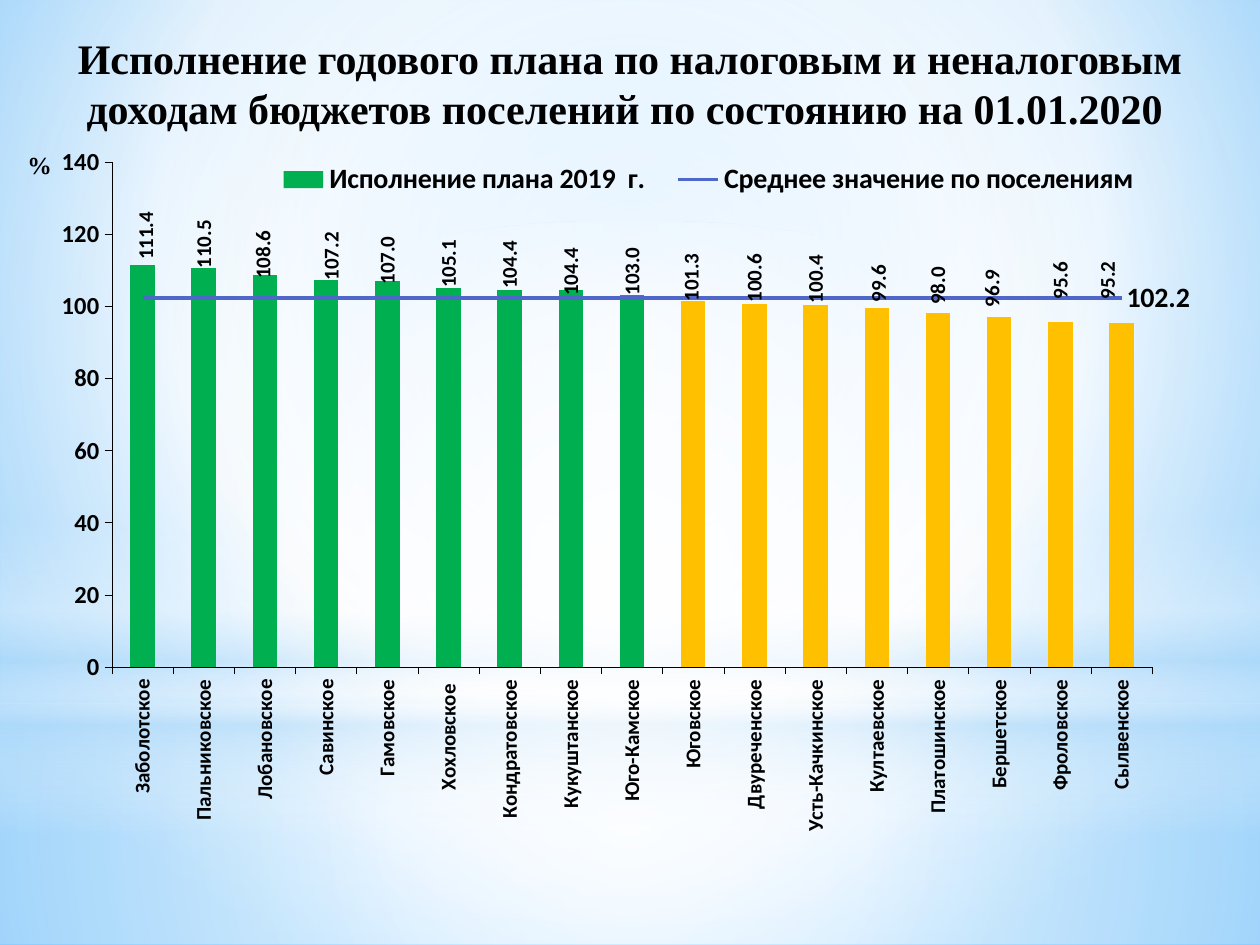
import pptx
import pptx.chart.data
import pptx.dml.color
import pptx.enum.chart
import pptx.enum.shapes
import pptx.enum.text
import pptx.oxml
import pptx.oxml.ns
import pptx.util

Pt = pptx.util.Pt
qn = pptx.oxml.ns.qn
nsdecls = pptx.oxml.ns.nsdecls

COLORS = {
    "text": "000000", "above": "00B050", "below": "FFC000", "average": "4E67C8",
    "white": "FFFFFF", "haze": "B4DCFA", "sky": "9ED5FF", "deep": "5BB9FF",
}
AVERAGE = 102.2
CHART_WIDTH, CHART_HEIGHT = 683.3, 441.4
SETTLEMENTS = {
    "Заболотское": 111.4, "Пальниковское": 110.5, "Лобановское": 108.6,
    "Савинское": 107.2, "Гамовское": 107, "Хохловское ": 105.1,
    "Кондратовское": 104.4, "Кукуштанское": 104.4, "Юго-Камское": 103,
    "Юговское": 101.3, "Двуреченское": 100.6, "Усть-Качкинское": 100.4,
    "Култаевское": 99.6, "Платошинское": 98, "Бершетское": 96.9,
    "Фроловское": 95.6, "Сылвенское": 95.2,
}
# Shift of each column label from its default place, in points
LABEL_SHIFTS = [(2, 0), (0, 3), (-1, 5), (3, 3), (0, 5), (0, 3), (0, 2), (0, 6), (0, 3),
                (-1, 3), (0, 2), (0, 2), (1, 0), (0, -2), (-4, -3), (0, -10), (-8, -11)]
CENTER = '<a:path path="circle"><a:fillToRect l="50000" t="50000" r="50000" b="50000"/></a:path>'
BACKDROP = '<a:path path="circle"><a:fillToRect l="20000" t="10000" r="20000" b="60000"/></a:path>'
DOWNWARD = '<a:lin ang="5400000" scaled="0"/>'


def rgb(name):
    return pptx.dml.color.RGBColor.from_string(COLORS[name])


def set_values(target, values):
    for name, value in values.items():
        setattr(target, name, value)


def set_font(font, size, name="Calibri"):
    set_values(font, {"size": Pt(size), "name": name, "bold": True})
    font.color.rgb = rgb("text")


def set_gradient(fill, parent, stops, direction):
    """Fill with stops of (position, color name, opacity), all in percent."""
    fill.solid()
    stop_xml = "".join(
        f'<a:gs pos="{position * 1000}"><a:srgbClr val="{COLORS[color]}">'
        f'<a:alpha val="{opacity * 1000}"/></a:srgbClr></a:gs>'
        for position, color, opacity in stops)
    gradient = pptx.oxml.parse_xml(
        f'<a:gradFill {nsdecls("a")} rotWithShape="1"><a:gsLst>{stop_xml}</a:gsLst>'
        f'{direction}</a:gradFill>')
    solid = next(parent.iter(qn("a:solidFill")))
    solid.getparent().replace(solid, gradient)


def add_glow(slide, kind, top, height, stops, direction=CENTER):
    shape = slide.shapes.add_shape(kind, 0, Pt(top), Pt(720), Pt(height))
    shape.shadow.inherit = False
    shape.line.fill.background()
    set_gradient(shape.fill, shape.element, stops, direction)


def add_background(slide):
    set_gradient(slide.background.fill, slide.element,
                 [(0, "sky", 100), (60, "white", 100), (100, "deep", 100)], BACKDROP)
    kinds = pptx.enum.shapes.MSO_SHAPE
    add_glow(slide, kinds.RECTANGLE, 402, 138,
             [(0, "white", 91), (37, "white", 76), (100, "haze", 79)])
    add_glow(slide, kinds.RECTANGLE, 0, 402,
             [(0, "white", 89), (48, "white", 62), (100, "haze", 79)])
    add_glow(slide, kinds.RECTANGLE, 296.6, 180,
             [(0, "white", 0), (29, "white", 30), (45, "haze", 40),
              (55, "white", 26), (65, "haze", 60), (100, "white", 0)], DOWNWARD)
    add_glow(slide, kinds.OVAL, 126, 402, [(0, "white", 100), (56, "white", 0)])


def add_text(slide, text, box, size, alignment):
    frame = slide.shapes.add_textbox(*map(Pt, box)).text_frame
    frame.word_wrap = True
    paragraph = frame.paragraphs[0]
    paragraph.alignment = alignment
    run = paragraph.add_run()
    run.text = text
    set_font(run.font, size, "Times New Roman")


def layout_xml(**values):
    tags = "".join(f'<c:{tag} val="{value}"/>' for tag, value in values.items())
    return f'<c:layout {nsdecls("c")}><c:manualLayout>{tags}</c:manualLayout></c:layout>'


def add_labels(series, shifts, size, rotation, position):
    """Label the points whose indexes are keys of shifts."""
    labels = ""
    for index, (x, y) in shifts.items():
        layout = layout_xml(x=round(x / CHART_WIDTH, 4), y=round(y / CHART_HEIGHT, 4))
        labels += (
            f'<c:dLbl><c:idx val="{index}"/>{layout}'
            '<c:numFmt formatCode="#,##0.0" sourceLinked="0"/><c:spPr><a:noFill/></c:spPr>'
            f'<c:txPr><a:bodyPr rot="{rotation * 60000}" vert="horz"/><a:p><a:pPr>'
            f'<a:defRPr sz="{size * 100}" b="1"><a:solidFill><a:srgbClr val="{COLORS["text"]}"/>'
            '</a:solidFill><a:latin typeface="Calibri"/></a:defRPr></a:pPr>'
            f'<a:endParaRPr/></a:p></c:txPr><c:dLblPos val="{position}"/>'
            '<c:showLegendKey val="0"/><c:showVal val="1"/><c:showCatName val="0"/>'
            '<c:showSerName val="0"/><c:showPercent val="0"/><c:showBubbleSize val="0"/></c:dLbl>')
    hidden = "".join(f'<c:{tag} val="0"/>' for tag in (
        "showLegendKey", "showVal", "showCatName", "showSerName", "showPercent", "showBubbleSize"))
    element = pptx.oxml.parse_xml(
        f'<c:dLbls {nsdecls("c", "a")}>{labels}{hidden}</c:dLbls>')
    series._element.find(qn("c:cat")).addprevious(element)


def move_to_line_plot(chart):
    """Turn the last column series into a line on the same axes."""
    bars = next(chart.element.iter(qn("c:barChart")))
    series = bars.findall(qn("c:ser"))[-1]
    for bar_setting in series.findall(qn("c:invertIfNegative")):
        series.remove(bar_setting)
    axes = "".join(f'<c:axId val="{axis.get("val")}"/>' for axis in bars.findall(qn("c:axId")))
    lines = pptx.oxml.parse_xml(
        f'<c:lineChart {nsdecls("c")}><c:grouping val="standard"/><c:varyColors val="0"/>'
        f'<c:marker val="1"/>{axes}</c:lineChart>')
    lines.insert(2, series)
    bars.addnext(lines)
    return chart.plots[1].series[0]


def format_axes(chart):
    enums = pptx.enum.chart
    set_values(chart.value_axis, {"minimum_scale": 0, "maximum_scale": 140, "major_unit": 20})
    set_values(chart.value_axis.tick_labels, {"number_format": "0", "number_format_is_linked": False})
    chart.category_axis.tick_label_position = enums.XL_TICK_LABEL_POSITION.LOW
    for axis, size in ((chart.category_axis, 12), (chart.value_axis, 14)):
        set_values(axis, {"has_major_gridlines": False,
                          "major_tick_mark": enums.XL_TICK_MARK.OUTSIDE,
                          "minor_tick_mark": enums.XL_TICK_MARK.NONE})
        axis.format.line.color.rgb = rgb("text")
        axis.format.line.width = Pt(0.25)
        set_font(axis.tick_labels.font, size)
    category_text = next(chart.category_axis._element.iter(qn("c:txPr")))
    category_text.find(qn("a:bodyPr")).set("rot", str(-90 * 60000))


def set_layout(element, following, **values):
    """Place a chart part; following is the child that comes after its layout."""
    for old in element.findall(qn("c:layout")):
        element.remove(old)
    element.find(qn(following)).addprevious(pptx.oxml.parse_xml(layout_xml(**values)))


def add_chart(slide):
    data = pptx.chart.data.CategoryChartData(number_format="0.0")
    data.categories = list(SETTLEMENTS)
    data.add_series("Исполнение плана 2019  г. ", list(SETTLEMENTS.values()))
    data.add_series("Среднее значение по поселениям", [AVERAGE] * len(SETTLEMENTS))
    chart = slide.shapes.add_chart(
        pptx.enum.chart.XL_CHART_TYPE.COLUMN_CLUSTERED, Pt(22.3), Pt(82.8),
        Pt(CHART_WIDTH), Pt(CHART_HEIGHT), data).chart
    set_values(chart, {"has_title": False, "has_legend": True})
    set_font(chart.font, 18)
    set_font(chart.legend.font, 16)
    set_values(chart.legend, {"position": pptx.enum.chart.XL_LEGEND_POSITION.BOTTOM,
                              "include_in_layout": False})
    format_axes(chart)

    set_values(chart.plots[0], {"gap_width": 150, "vary_by_categories": False})
    average = move_to_line_plot(chart)
    average.smooth = False
    average.marker.style = pptx.enum.chart.XL_MARKER_STYLE.NONE
    average.format.line.color.rgb = rgb("average")
    average.format.line.width = Pt(2)
    add_labels(average, {len(SETTLEMENTS) - 1: (0, 0)}, 16, 0, "r")

    columns = chart.plots[0].series[0]
    columns.format.fill.solid()
    columns.format.fill.fore_color.rgb = rgb("above")
    for index, value in enumerate(SETTLEMENTS.values()):
        if value < AVERAGE:
            fill = columns.points[index].format.fill
            fill.solid()
            fill.fore_color.rgb = rgb("below")
    add_labels(columns, dict(enumerate(LABEL_SHIFTS)), 12, -90, "outEnd")

    set_layout(next(chart.element.iter(qn("c:plotArea"))), "c:barChart", layoutTarget="inner",
               xMode="edge", yMode="edge", x=0.061, y=0.022, w=0.87, h=0.654)
    set_layout(next(chart.element.iter(qn("c:legend"))), "c:overlay",
               xMode="edge", yMode="edge", x=0.19, y=0.02, w=0.74, h=0.05)


def main():
    presentation = pptx.Presentation()
    set_values(presentation, {"slide_width": Pt(720), "slide_height": Pt(540)})
    slide = presentation.slides.add_slide(presentation.slide_layouts[6])
    alignments = pptx.enum.text.PP_ALIGN
    add_background(slide)
    add_text(slide, "Исполнение годового плана по налоговым и неналоговым доходам бюджетов "
             "поселений по состоянию на 01.01.2020 ", (36, 15, 648, 39), 24, alignments.CENTER)
    add_chart(slide)
    add_text(slide, "%", (8.6, 82, 31, 28), 14, alignments.LEFT)
    presentation.save("out.pptx")


if __name__ == "__main__":
    main()
